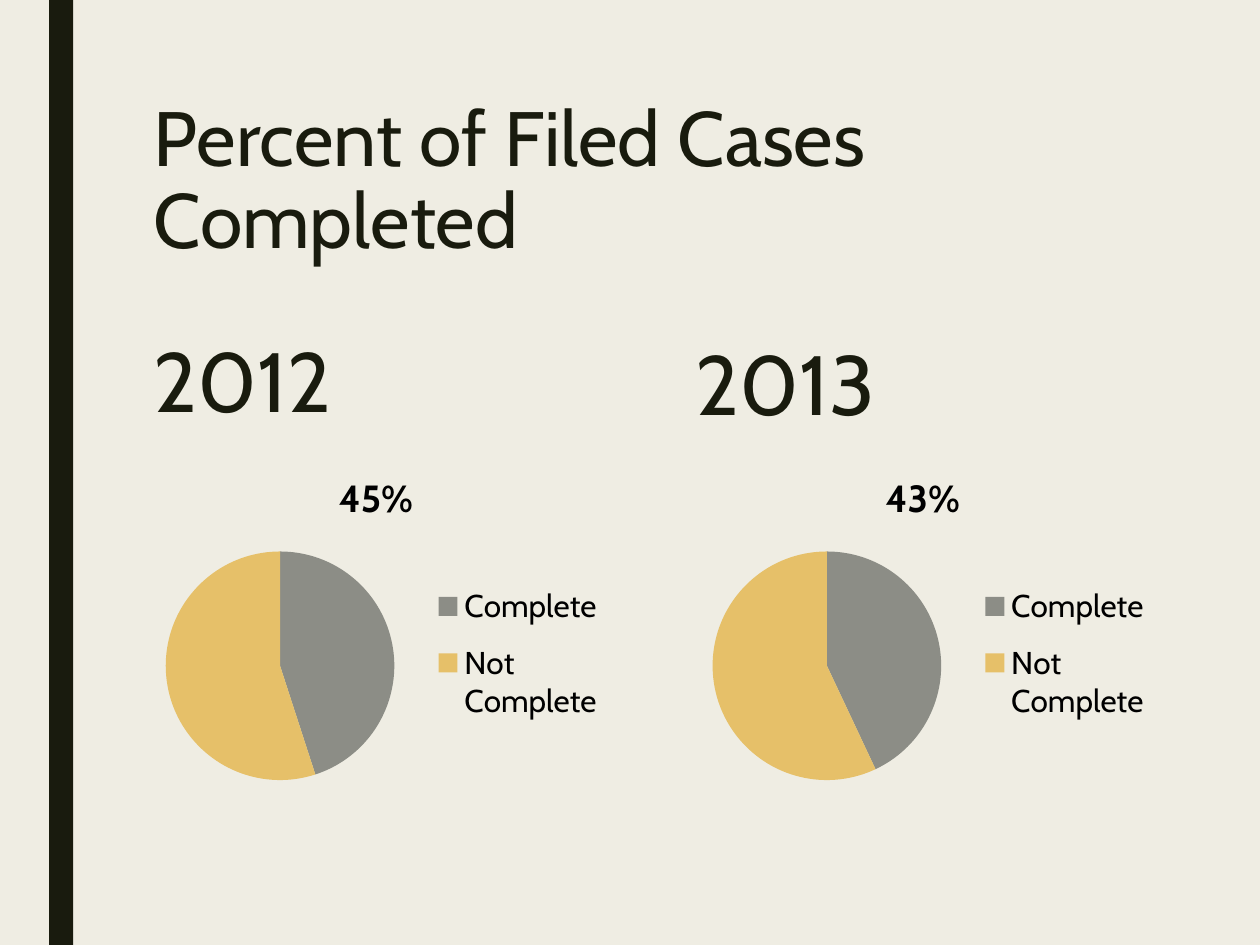
from lxml import etree
from pptx import Presentation
from pptx import util as u
from pptx.chart.data import CategoryChartData
from pptx.dml.color import RGBColor
from pptx.enum import chart as ch
from pptx.enum import shapes, text
from pptx.oxml.ns import qn

PAPER = RGBColor(0xEF, 0xED, 0xE3)
INK = RGBColor(0x19, 0x1B, 0x0E)
BLACK = RGBColor(0, 0, 0)
GREY = RGBColor(0x8C, 0x8D, 0x86)
GOLD = RGBColor(0xE6, 0xC0, 0x69)
COMPARISON_LAYOUT = 4


def box(left, top, width, height):
    return [u.Inches(length) for length in (left, top, width, height)]


def manual_layout(x, y, w, h, inner=False):
    """Return a c:layout element in fractions of the chart area."""
    layout = etree.Element(qn("c:layout"))
    manual = etree.SubElement(layout, qn("c:manualLayout"))
    settings = [("layoutTarget", "inner")] if inner else []
    settings += [("xMode", "edge"), ("yMode", "edge"),
                 ("x", x), ("y", y), ("w", w), ("h", h)]
    for tag, value in settings:
        etree.SubElement(manual, qn("c:" + tag)).set("val", str(value))
    return layout


class ComparisonSlide:
    font = "Cabin"

    def __init__(self, deck):
        self.slide = deck.slides.add_slide(deck.slide_layouts[COMPARISON_LAYOUT])
        self.slide.background.fill.solid()
        self.slide.background.fill.fore_color.rgb = PAPER

    def bar(self, *place):
        bar = self.slide.shapes.add_shape(shapes.MSO_SHAPE.RECTANGLE, *box(*place))
        bar.shadow.inherit = False
        bar.fill.solid()
        bar.fill.fore_color.rgb = INK
        bar.line.fill.background()

    def heading(self, idx, wording, place, size, spacing, anchor):
        heading = self.slide.placeholders[idx]
        heading.left, heading.top, heading.width, heading.height = box(*place)
        frame = heading.text_frame
        frame.word_wrap = True
        frame.auto_size = text.MSO_AUTO_SIZE.NONE
        frame.vertical_anchor = anchor
        paragraph = frame.paragraphs[0]
        paragraph.alignment = text.PP_ALIGN.LEFT
        paragraph.line_spacing = spacing
        paragraph.space_before = u.Pt(0)
        run = paragraph.add_run()
        run.text = wording
        self.style(run.font, size, INK)

    def style(self, font, size, color, bold=False):
        font.name, font.size, font.bold = self.font, u.Pt(size), bold
        font.color.rgb = color

    def pie(self, complete, *place):
        data = CategoryChartData()
        data.categories = ["Complete", "Not Complete"]
        data.add_series("Series 1", [complete, 100 - complete])
        chart = self.slide.shapes.add_chart(
            ch.XL_CHART_TYPE.PIE, *box(*place), data).chart
        self.style(chart.font, 18, BLACK)

        chart.has_title = True
        run = chart.chart_title.text_frame.paragraphs[0].add_run()
        run.text = f"{complete}%"
        self.style(run.font, 21.6, BLACK, bold=True)
        chart.chart_title.include_in_layout = False

        plot = chart.plots[0]
        plot.vary_by_categories = True
        for index, color in enumerate((GREY, GOLD)):
            slice_format = plot.series[0].points[index].format
            slice_format.fill.solid()
            slice_format.fill.fore_color.rgb = color
            slice_format.line.fill.background()

        chart.has_legend = True
        legend = chart.legend
        legend.position = ch.XL_LEGEND_POSITION.RIGHT
        legend.include_in_layout = False
        self.style(legend.font, 18, BLACK)
        position = legend._element.find(qn("c:legendPos"))
        position.addnext(manual_layout(0.61, 0.34, 0.37, 0.49))

        area = chart._chartSpace.find(".//" + qn("c:plotArea"))
        for layout in area.findall(qn("c:layout")):
            area.remove(layout)
        area.insert(0, manual_layout(0.06, 0.29, 0.48, 0.66, inner=True))

    def remove_empty_placeholders(self):
        for holder in list(self.slide.placeholders):
            if not holder.has_text_frame or not holder.text_frame.text:
                holder._element.getparent().remove(holder._element)


def main():
    deck = Presentation()
    deck.slide_width, deck.slide_height = u.Inches(10), u.Inches(7.5)
    page = ComparisonSlide(deck)
    page.bar(0.39, 0, 0.19, 7.5)
    page.heading(0, "Percent of Filed Cases Completed", (1.12, 0.75, 7.88, 1.62),
                 44, 0.89, text.MSO_ANCHOR.TOP)
    years = [(1, "2012", 45, 1.12, 2.56, 1.08), (3, "2013", 43, 5.42, 2.58, 5.42)]
    for idx, year, complete, year_left, year_top, pie_left in years:
        page.heading(idx, year, (year_left, year_top, 3.65, 0.9),
                     48, 0.84, text.MSO_ANCHOR.BOTTOM)
        page.pie(complete, pie_left, 3.58, 3.81, 2.75)
    page.remove_empty_placeholders()
    deck.save("out.pptx")


if __name__ == "__main__":
    main()
